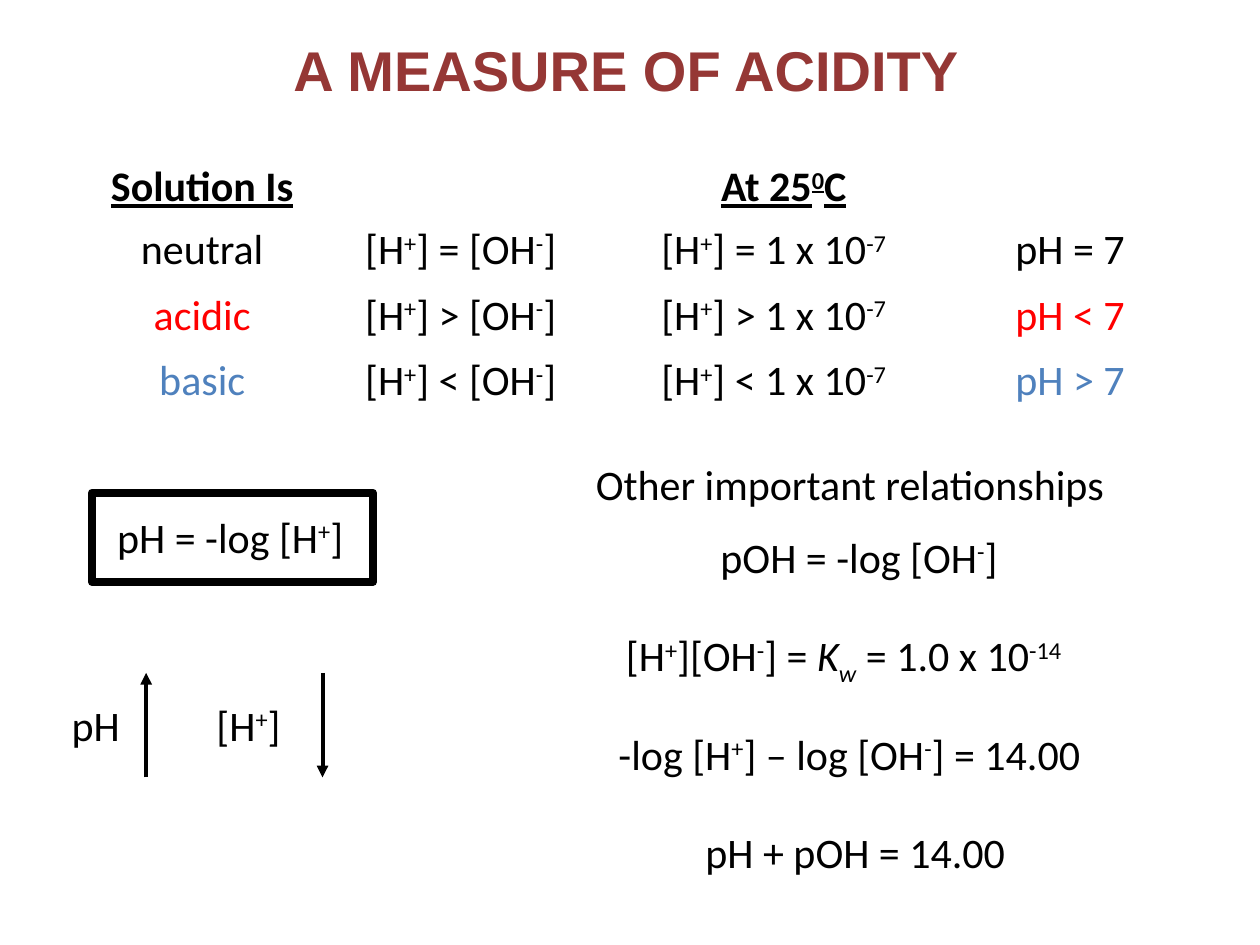
import pptx
import pptx.util
import pptx.dml.color
import pptx.enum.shapes
import pptx.enum.text
import pptx.oxml.ns
import lxml.etree

Inches = pptx.util.Inches
Pt = pptx.util.Pt
Align = pptx.enum.text.PP_ALIGN

BLACK, RED, BLUE, MAROON = "000000", "FF0000", "4F81BD", "953735"
LINE_HEIGHT = 0.5
BASELINES = {"^": "30000", "_": "-25000"}


def color(hex_string):
    return pptx.dml.color.RGBColor.from_string(hex_string)


def add_runs(paragraph, markup):
    """Pieces are split at |; a leading ^ raises, _ lowers and * or _ slants a piece."""
    for piece in markup.split("|"):
        mark = piece[0] if piece[0] in "^_*" else ""
        run = paragraph.add_run()
        run.text = piece[len(mark):]
        if mark in ("*", "_"):
            run.font.italic = True
        if mark in BASELINES:
            run._r.get_or_add_rPr().set("baseline", BASELINES[mark])


def write(shape, markup, size=24, font="Calibri", hex_color=BLACK, align=Align.LEFT,
          bold=False, underline=False):
    frame = shape.text_frame
    frame.word_wrap = False
    frame.auto_size = pptx.enum.text.MSO_AUTO_SIZE.SHAPE_TO_FIT_TEXT
    paragraph = frame.paragraphs[0]
    paragraph.alignment = align
    paragraph.font.size = Pt(size)
    paragraph.font.name = font
    paragraph.font.color.rgb = color(hex_color)
    paragraph.font.bold = bold
    paragraph.font.underline = underline
    add_runs(paragraph, markup)


def add_text(shapes, left, top, width, height, markup, **style):
    box = shapes.add_textbox(Inches(left), Inches(top), Inches(width), Inches(height))
    write(box, markup, **style)
    return box


def add_title(slide, left, top, width, height):
    title = add_text(slide.shapes, left, top, width, height, "A MEASURE OF ACIDITY",
                     size=32, font="Arial", hex_color=MAROON, align=Align.CENTER, bold=True)
    title.text_frame.auto_size = pptx.enum.text.MSO_AUTO_SIZE.NONE
    title.text_frame.word_wrap = True
    title.text_frame.vertical_anchor = pptx.enum.text.MSO_ANCHOR.MIDDLE


def add_solution_grid(slide, left, top):
    heading = {"align": Align.CENTER, "bold": True, "underline": True}
    name_width = 1.67
    add_text(slide.shapes, left, top, name_width, LINE_HEIGHT, "Solution Is", **heading)
    add_text(slide.shapes, left + 4.84, top, 1.22, LINE_HEIGHT, "At 25|^0|C", **heading)

    rows = [("neutral", 1.19, "=", "=", BLACK),
            ("acidic", 0.98, ">", "<", RED),
            ("basic", 0.89, "<", ">", BLUE)]
    for index, (name, width, ion_sign, ph_sign, hex_color) in enumerate(rows):
        row_top = top + LINE_HEIGHT + 0.52 * index
        add_text(slide.shapes, left + (name_width - width) / 2, row_top, width, LINE_HEIGHT,
                 name, hex_color=hex_color, align=Align.CENTER)
        add_text(slide.shapes, left + 2.03, row_top, 1.76, LINE_HEIGHT,
                 f"[H|^+|] {ion_sign} [OH|^-|]")
        add_text(slide.shapes, left + 4.38, row_top, 2.04, LINE_HEIGHT,
                 f"[H|^+|] {ion_sign} 1 x 10|^-7")
        add_text(slide.shapes, left + 7.19, row_top, 1.08, LINE_HEIGHT,
                 f"pH {ph_sign} 7", hex_color=hex_color)


def add_definition(slide, left, top, width, height):
    box = slide.shapes.add_shape(pptx.enum.shapes.MSO_SHAPE.RECTANGLE, Inches(left),
                                 Inches(top), Inches(width), Inches(height))
    box.shadow.inherit = False
    box.fill.background()
    box.line.color.rgb = color(BLACK)
    box.line.width = Pt(4.5)
    frame = box.text_frame
    frame.margin_left = frame.margin_right = Inches(0.2)
    frame.margin_top = frame.margin_bottom = Inches(0.15)
    frame.vertical_anchor = pptx.enum.text.MSO_ANCHOR.TOP
    write(box, "pH = -log [H|^+|]")


def add_arrow(shapes, x, start, end):
    arrow = shapes.add_connector(pptx.enum.shapes.MSO_CONNECTOR.STRAIGHT, Inches(x),
                                 Inches(start), Inches(x), Inches(end))
    arrow.line.color.rgb = color(BLACK)
    arrow.line.width = Pt(2.25)
    qn = pptx.oxml.ns.qn
    lxml.etree.SubElement(arrow.line._get_or_add_ln(), qn("a:tailEnd"), type="triangle")
    lxml.etree.SubElement(arrow._element.spPr, qn("a:effectLst"))


def add_trends(slide, left, top, height):
    bottom = top + height
    trends = [("pH", 0, 0.66, 0.69, bottom, top),
              ("[H|^+|]", 1.15, 0.73, 2.09, top, bottom)]
    for markup, offset, width, arrow_offset, start, end in trends:
        group = slide.shapes.add_group_shape()
        add_text(group.shapes, left + offset, top + 0.16, width, 0.51, markup)
        add_arrow(group.shapes, left + arrow_offset, start, end)


def add_relationships(slide, left, top):
    add_text(slide.shapes, left, top, 4.28, LINE_HEIGHT, "Other important relationships")
    equations = [("pOH = -log [OH|^-|]", 0.99, 2.43),
                 ("[H|^+|][OH|^-|] = |*K|_w| = 1.0 x 10|^-14", 0.24, 3.76),
                 ("-log [H|^+|] – log [OH|^-|] = 14.00", 0.18, 3.92),
                 ("pH + pOH = 14.00", 0.87, 2.6)]
    for index, (markup, offset, width) in enumerate(equations):
        add_text(slide.shapes, left + offset, top + 0.58 + 0.78 * index, width,
                 LINE_HEIGHT, markup)


def main():
    presentation = pptx.Presentation()
    presentation.slide_width = Inches(10)
    presentation.slide_height = Inches(7.5)
    slide = presentation.slides.add_slide(presentation.slide_layouts[6])
    add_title(slide, 0.72, 0.17, 8.5, 0.75)
    add_definition(slide, 0.73, 3.91, 2.23, 0.71)
    add_solution_grid(slide, 0.77, 1.22)
    add_trends(slide, 0.47, 5.34, 0.83)
    add_relationships(slide, 4.63, 3.59)
    presentation.save("out.pptx")


if __name__ == "__main__":
    main()
